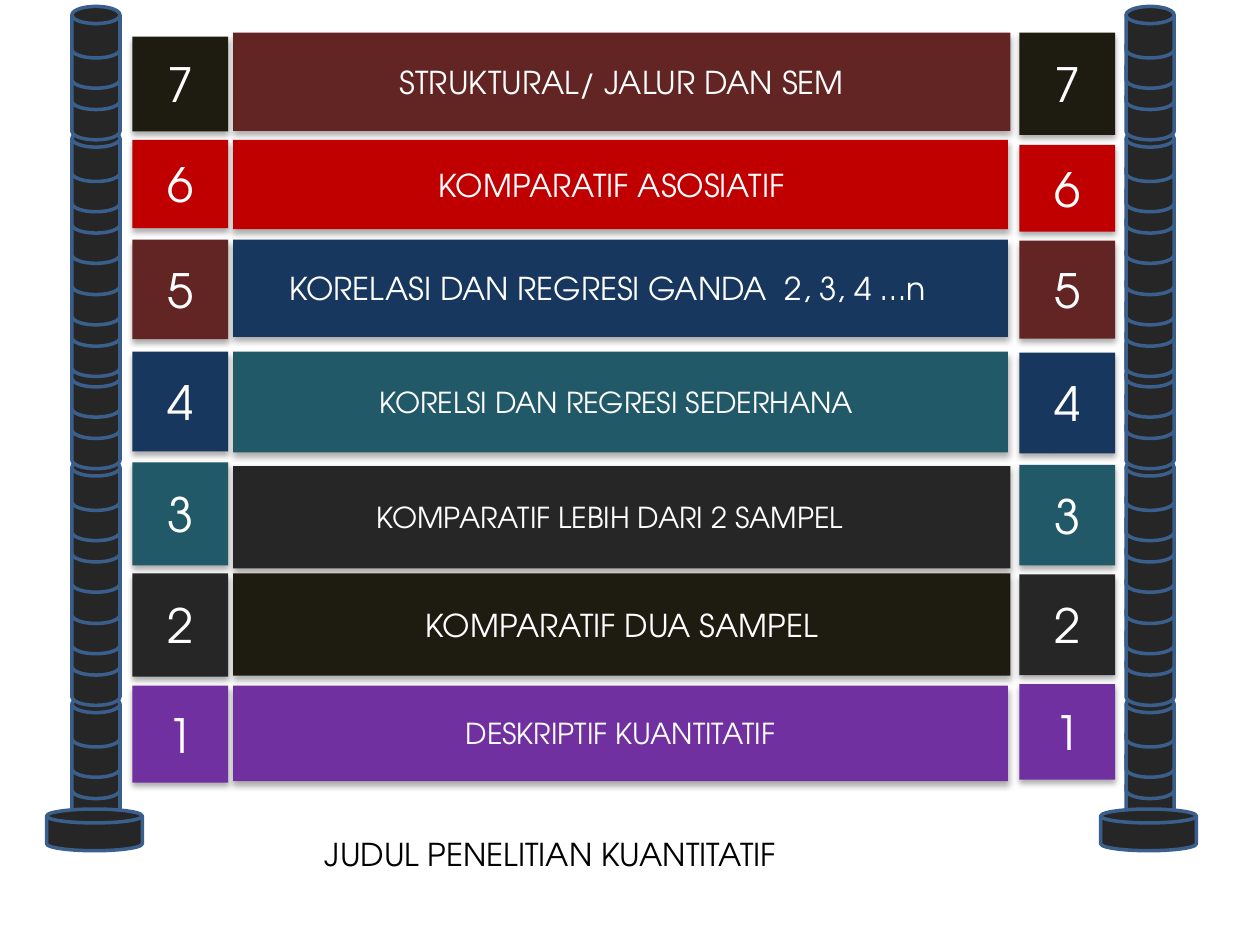
import pptx
import pptx.dml.color
import pptx.enum.shapes
import pptx.enum.text
import pptx.oxml
import pptx.oxml.ns
import pptx.util

Cm = pptx.util.Cm
Pt = pptx.util.Pt
RGBColor = pptx.dml.color.RGBColor
MSO_SHAPE = pptx.enum.shapes.MSO_SHAPE

FONT = "TeX Gyre Adventor"
BLACK = RGBColor(0x00, 0x00, 0x00)
WHITE = RGBColor(0xFF, 0xFF, 0xFF)
CHARCOAL = RGBColor(0x26, 0x26, 0x26)
OUTLINE = RGBColor(0x3A, 0x5F, 0x8C)
OLIVE = RGBColor(0x1E, 0x1C, 0x11)
MAROON = RGBColor(0x63, 0x25, 0x23)
RED = RGBColor(0xC0, 0x00, 0x00)
NAVY = RGBColor(0x17, 0x37, 0x5E)
TEAL = RGBColor(0x21, 0x59, 0x68)
PURPLE = RGBColor(0x70, 0x30, 0xA0)

SHADOW = (
    f'<a:effectLst {pptx.oxml.ns.nsdecls("a")}>'
    f'<a:outerShdw blurRad="{Pt(3.5)}" dist="{Pt(2.2)}" dir="5400000" rotWithShape="0">'
    '<a:srgbClr val="000000"><a:alpha val="32000"/></a:srgbClr>'
    '</a:outerShdw></a:effectLst>'
)

# Posts: each segment is four discs, listed from the top (cm)
SEGMENT_TOPS = (0.13, 2.62, 4.90, 6.76, 9.25, 11.53, 14.02)
DISC_OFFSETS = (0, 0.61, 1.04, 1.65)
POST_LEFTS = (0.94, 22.19)

# Columns of the ladder (cm)
LEFT_TILE_X, BAR_X, RIGHT_TILE_X = 2.67, 4.70, 20.55
TILE_WIDTH = 1.93
INSET = 0.25

# Rungs: number, tile colour, bar colour, label, label size, extra right inset,
# bar width, then (top, height) of left tile, bar and right tile (cm)
RUNGS = (
    (7, OLIVE, MAROON, "STRUKTURAL/ JALUR DAN SEM", 18, 0,
     15.67, (0.74, 1.91), (0.66, 1.98), (0.66, 2.06)),
    (6, RED, RED, "KOMPARATIF ASOSIATIF", 18, 0.36,
     15.62, (2.82, 1.78), (2.82, 1.80), (2.92, 1.75)),
    (5, MAROON, NAVY, "KORELASI DAN REGRESI GANDA  2, 3, 4 …n", 18, 0.53,
     15.62, (4.83, 2.01), (4.83, 1.96), (4.85, 1.98)),
    (4, NAVY, TEAL, "KORELSI DAN REGRESI SEDERHANA", 16.5, 0.17,
     15.62, (7.09, 2.01), (7.09, 2.03), (7.11, 2.03)),
    (3, TEAL, CHARCOAL, "KOMPARATIF LEBIH DARI 2 SAMPEL", 16.5, 0.48,
     15.67, (9.32, 2.08), (9.40, 2.06), (9.37, 2.03)),
    (2, CHARCOAL, OLIVE, "KOMPARATIF DUA SAMPEL", 18, 0,
     15.67, (11.56, 2.08), (11.56, 2.06), (11.58, 2.03)),
    (1, PURPLE, PURPLE, "DESKRIPTIF KUANTITATIF", 16.5, 0,
     15.62, (13.82, 1.96), (13.82, 1.93), (13.79, 1.93)),
)


def style_text(paragraph, size, color):
    paragraph.font.name = FONT
    paragraph.font.size = Pt(size)
    paragraph.font.color.rgb = color


def add_disc(post, left, top, width, height):
    disc = post.shapes.add_shape(MSO_SHAPE.FLOWCHART_MAGNETIC_DISK,
                                 Cm(left), Cm(top), Cm(width), Cm(height))
    disc.shadow.inherit = False
    disc.fill.solid()
    disc.fill.fore_color.rgb = CHARCOAL
    disc.line.color.rgb = OUTLINE
    disc.line.width = Pt(2)


def add_post(slide, left):
    post = slide.shapes.add_group_shape()
    # The lowest disc lies at the back
    for segment_top in reversed(SEGMENT_TOPS):
        for offset in reversed(DISC_OFFSETS):
            add_disc(post, left + 0.51, segment_top + offset, 0.97, 1.04)
    # Foot of the post
    add_disc(post, left, 16.31, 1.93, 0.84)


def add_block(slide, kind, left, span, width, color, label, size, extra_inset=0):
    top, height = span
    block = slide.shapes.add_shape(kind, Cm(left), Cm(top), Cm(width), Cm(height))
    if kind == MSO_SHAPE.PENTAGON:
        block.adjustments[0] = 0
    block.fill.solid()
    block.fill.fore_color.rgb = color
    block.line.fill.background()
    block._element.spPr.append(pptx.oxml.parse_xml(SHADOW))

    frame = block.text_frame
    frame.word_wrap = True
    frame.vertical_anchor = pptx.enum.text.MSO_ANCHOR.MIDDLE
    frame.margin_right = Cm(INSET + extra_inset)
    paragraph = frame.paragraphs[0]
    paragraph.text = label
    paragraph.alignment = pptx.enum.text.PP_ALIGN.CENTER
    style_text(paragraph, size, WHITE)


def add_rung(slide, number, tile_color, bar_color, label, size, extra_inset,
             bar_width, left_span, bar_span, right_span):
    add_block(slide, MSO_SHAPE.PENTAGON, BAR_X, bar_span, bar_width,
              bar_color, label, size, extra_inset)
    for tile_x, span in ((LEFT_TILE_X, left_span), (RIGHT_TILE_X, right_span)):
        add_block(slide, MSO_SHAPE.RECTANGLE, tile_x, span, TILE_WIDTH,
                  tile_color, str(number), 27)


def add_caption(slide, text):
    caption = slide.shapes.add_textbox(Cm(6.3), Cm(16.71), Cm(12.4), Cm(1.02))
    caption.text_frame.word_wrap = True
    paragraph = caption.text_frame.paragraphs[0]
    paragraph.text = text
    style_text(paragraph, 18, BLACK)


def main():
    presentation = pptx.Presentation()
    presentation.slide_width = Cm(25.4)
    presentation.slide_height = Cm(19.05)
    slide = presentation.slides.add_slide(presentation.slide_layouts[6])

    # Ladder: two posts with seven rungs between them
    for left in POST_LEFTS:
        add_post(slide, left)
    for rung in RUNGS:
        add_rung(slide, *rung)

    # Caption below the ladder
    add_caption(slide, "JUDUL PENELITIAN KUANTITATIF")

    presentation.save("out.pptx")


if __name__ == "__main__":
    main()
